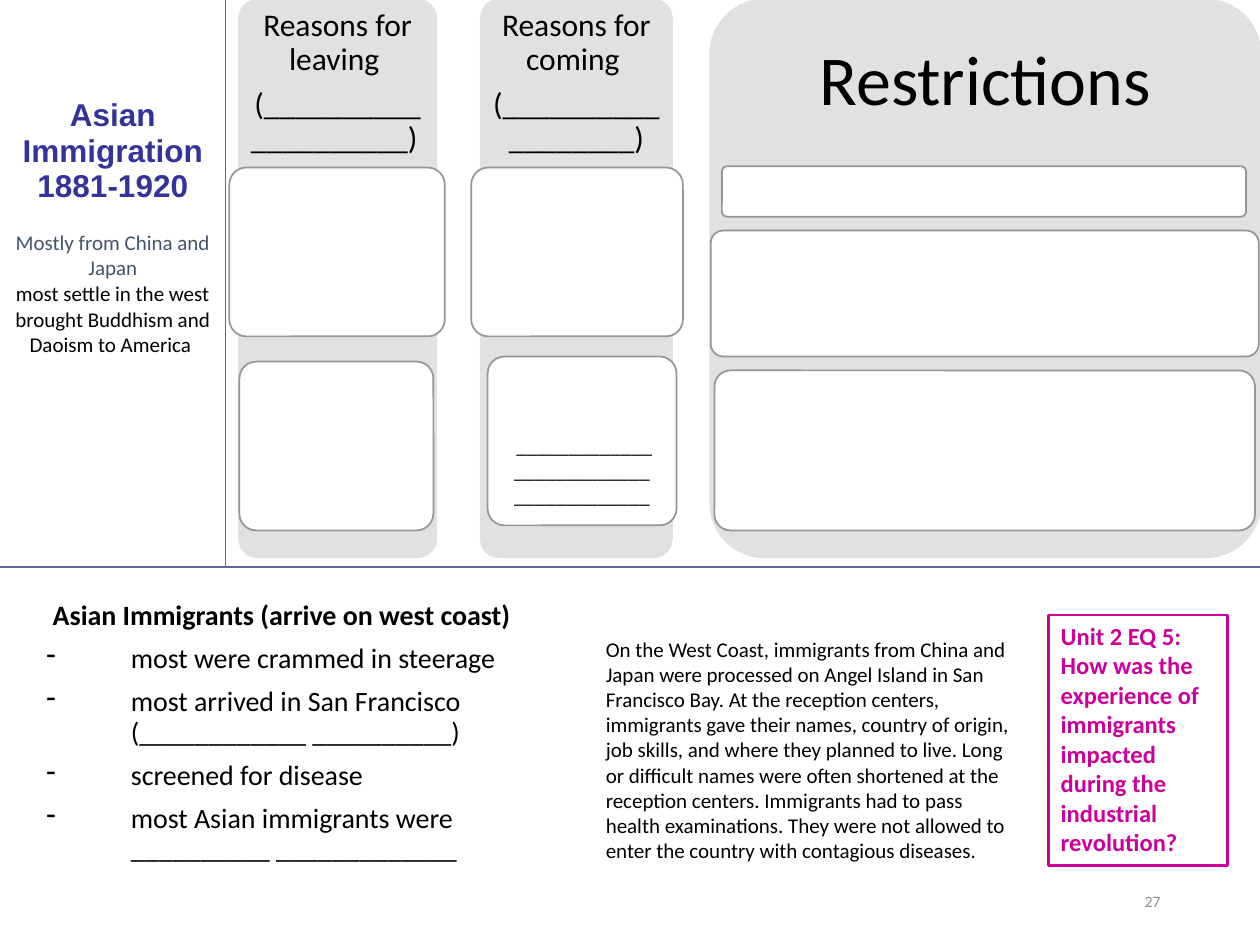
from lxml.etree import SubElement
from pptx import Presentation
from pptx.dml.color import RGBColor
from pptx.enum.shapes import MSO_SHAPE as Shape
from pptx.enum.text import MSO_ANCHOR as Anchor, PP_ALIGN as Align
from pptx.oxml.ns import qn
from pptx.util import Emu, Inches, Pt

prs = Presentation()
prs.slide_width, prs.slide_height = Inches(10), Inches(7.5)
COL, ROW = prs.slide_width / 100, prs.slide_height / 75  # grid of 100 x 75

BLACK, WHITE, PANEL, EDGE = "000000", "FFFFFF", "E1E1E1", "969696"
RULE, MAGENTA = "666699", "CC0099"
NO_STYLE = "{2D5ABB26-0587-4C30-8999-92F81FD0307C}"


def rgb(value):
    return RGBColor.from_string(value)


def emu(box):
    """Turn left, top, width, height in grid units into lengths."""
    x, y, w, h = box
    return [Emu(round(n)) for n in (x * COL, y * ROW, w * COL, h * ROW)]


def inside(box, part):
    """Move a part, placed from its region's corner, onto the slide grid."""
    return box[0] + part[0], box[1] + part[1], part[2], part[3]


def write(tf, lines, margin=None, anchor=Anchor.TOP, **common):
    """Fill a frame; each line is its text and the format that is its own."""
    tf.word_wrap, tf.vertical_anchor = True, anchor
    if margin is not None:
        for side in ("left", "right", "top", "bottom"):
            setattr(tf, f"margin_{side}", Inches(margin))
    for i, (text, own) in enumerate(lines):
        fmt = {"name": "Calibri", "size": 12, "bold": False, "color": BLACK,
               **common, **own}
        p = tf.paragraphs[0] if i == 0 else tf.add_paragraph()
        for key in ("alignment", "line_spacing"):
            if key in fmt:
                setattr(p, key, fmt[key])
        for key in ("space_before", "space_after"):
            setattr(p, key, Pt(fmt.get(key, 0)))
        r = p.add_run()
        r.text = text
        r.font.name, r.font.size = fmt["name"], Pt(fmt["size"])
        r.font.bold, r.font.color.rgb = fmt["bold"], rgb(fmt["color"])


def add_text(s, box, lines, **fmt):
    tf = s.shapes.add_textbox(*emu(box)).text_frame
    write(tf, lines, **fmt)
    return tf


def add_box(s, box, fill, line=None, width=1, kind=Shape.ROUNDED_RECTANGLE):
    sp = s.shapes.add_shape(kind, *emu(box))
    sp.shadow.inherit = False
    if kind == Shape.ROUNDED_RECTANGLE:
        sp.adjustments[0] = 0.1
    sp.fill.solid()
    sp.fill.fore_color.rgb = rgb(fill)
    if line:
        sp.line.color.rgb, sp.line.width = rgb(line), Pt(width)
    else:
        sp.line.fill.background()
    return sp


def add_borders(cell, sides):
    tc_pr = cell._tc.get_or_add_tcPr()
    for side in sides:
        ln = SubElement(tc_pr, qn(f"a:ln{side}"), w=str(Pt(1)))
        fill = SubElement(ln, qn("a:solidFill"))
        SubElement(fill, qn("a:srgbClr"), val=RULE)
    cell.fill.background()


def topic_table(s, box):
    frame = s.shapes.add_table(1, 2, *emu(box))
    table = frame.table
    table.first_row = table.horz_banding = False
    table._tbl.tblPr.find(qn("a:tableStyleId")).text = NO_STYLE
    for column, share in zip(table.columns, (0.179, 0.821)):
        column.width = Emu(round(box[2] * COL * share))
    topic, rest = table.cell(0, 0), table.cell(0, 1)
    add_borders(topic, "RB")
    add_borders(rest, "LB")
    write(topic.text_frame, [
        ("Asian Immigration 1881-1920",
         {"name": "Arial", "size": 18, "bold": True, "color": "333399",
          "space_after": 15}),
        ("Mostly from China and Japan", {"color": "44546A"}),
        ("most settle in the west", {}),
        ("brought Buddhism and Daoism to America ", {}),
    ], alignment=Align.CENTER)
    topic.vertical_anchor = Anchor.TOP
    topic.margin_left = topic.margin_right = Inches(0.1)
    topic.margin_top = Inches(0.78)


def panel(s, box, heading, cards, size=18, margin=0.07):
    """Grey column with a heading and white cards; returns the cards."""
    add_box(s, box, PANEL)
    add_text(s, inside(box, (0, 0, box[2], box[3] * 0.3)),
             [(text, {}) for text in heading], margin=margin,
             anchor=Anchor.MIDDLE, alignment=Align.CENTER, size=size,
             line_spacing=0.9, space_after=size * 0.35)
    return [add_box(s, inside(box, card), WHITE, EDGE) for card in cards]


def reasons_and_restrictions(s, top=-0.1, height=44.4):
    panel(s, (18.9, top, 15.8, height),
          ["Reasons for leaving ", "(____________________) "],
          [(-0.7, 13.4, 17.1, 13.4), (0.1, 28.8, 15.4, 13.4)])
    coming = panel(s, (38.1, top, 15.3, height),
                   ["Reasons for coming ", "(__________________)"],
                   [(-0.7, 13.4, 16.8, 13.4), (0.6, 28.4, 15, 13.4)])
    blank = "_" * 13
    write(coming[-1].text_frame, [(" " + blank, {}), (blank, {}), (blank, {})],
          margin=0.1, anchor=Anchor.BOTTOM, alignment=Align.CENTER)
    panel(s, (56.3, top, 43.8, height), ["Restrictions"],
          [(1, 13.3, 41.6, 4), (0.1, 18.4, 43.5, 10), (0.4, 29.5, 42.9, 12.7)],
          size=40, margin=0.17)


def arrival_notes(s, box):
    points = ["most were crammed in steerage",
              "most arrived in San Francisco (____________ __________)",
              "screened for disease",
              "most Asian immigrants were __________ _____________"]
    title = (" Asian Immigrants (arrive on west coast)", {"bold": True})
    tf = add_text(s, box, [title] + [(text, {}) for text in points],
                  size=16, line_spacing=0.9, space_before=7.5)
    for p in tf.paragraphs[1:]:
        p_pr = p._p.get_or_add_pPr()
        p_pr.set("marL", str(Inches(0.67)))
        p_pr.set("indent", str(-Inches(0.67)))
        SubElement(p_pr, qn("a:buChar"), char="-")


def essential_question(s, box):
    sp = add_box(s, box, WHITE, MAGENTA, 1.5, Shape.RECTANGLE)
    question = ("Unit 2 EQ 5: How was the experience of immigrants impacted "
                "during the industrial revolution?")
    write(sp.text_frame, [(question, {})], size=14, bold=True, color=MAGENTA,
          alignment=Align.LEFT)


def main():
    s = prs.slides.add_slide(prs.slide_layouts[6])
    topic_table(s, (0, 0, 100, 45))
    reasons_and_restrictions(s)
    arrival_notes(s, (2.7, 47.2, 44.2, 26.2))
    add_text(s, (47.1, 50, 34.7, 21.2), [(
        "On the West Coast, immigrants from China and Japan were processed on "
        "Angel Island in San Francisco Bay. At the reception centers, "
        "immigrants gave their names, country of origin, job skills, and "
        "where they planned to live. Long or difficult names were often "
        "shortened at the reception centers. Immigrants had to pass health "
        "examinations. They were not allowed to enter the country with "
        "contagious diseases.", {})])
    essential_question(s, (83.2, 48.8, 14.2, 19.9))
    add_text(s, (70.6, 69.5, 22.5, 4), [("27", {})], anchor=Anchor.MIDDLE,
             alignment=Align.RIGHT, size=9, color="8C8C8C")
    prs.save("out.pptx")


if __name__ == "__main__":
    main()
